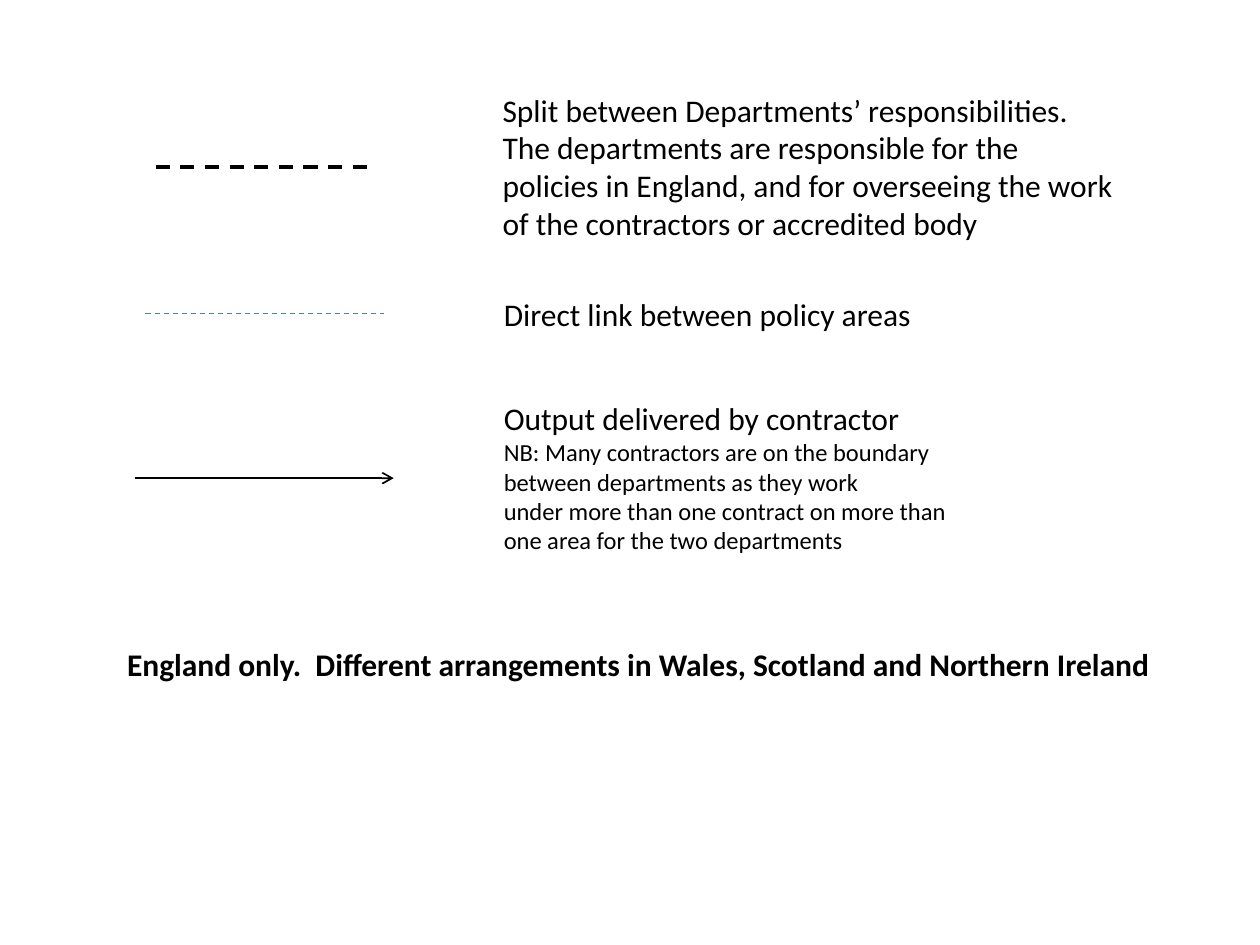
from lxml import etree
from pptx import Presentation
from pptx.dml.color import RGBColor
from pptx.enum.dml import MSO_LINE
from pptx.enum.shapes import MSO_CONNECTOR
from pptx.enum.text import MSO_AUTO_SIZE
from pptx.oxml.ns import qn
from pptx.util import Inches, Pt

STRAIGHT = MSO_CONNECTOR.STRAIGHT
DASH = MSO_LINE.DASH
FIT_SHAPE = MSO_AUTO_SIZE.SHAPE_TO_FIT_TEXT

COLORS = {"text": "000000", "split": "000000", "link": "4B7EBC", "output": "000000"}
FONT = "Calibri"
HEADING_SIZE, NOTE_SIZE = 18, 14
SYMBOL_CENTER = 2.1


def add_text(slide, box, lines, wrap=True, bold=False):
    """Place (text, size) lines in a box, one paragraph each."""
    text_box = slide.shapes.add_textbox(*map(Inches, box))
    frame = text_box.text_frame
    frame.word_wrap = wrap
    frame.auto_size = FIT_SHAPE
    frame.text = "\n".join(text for text, _ in lines)
    for paragraph, (_, size) in zip(frame.paragraphs, lines):
        font = paragraph.runs[0].font
        font.name, font.size, font.bold = FONT, Pt(size), bold
        font.color.rgb = RGBColor.from_string(COLORS["text"])


def add_symbol(slide, middle, length, color, weight, dash=None, arrow=False):
    """Draw a horizontal key line centred in the symbol column."""
    start, end = SYMBOL_CENTER - length / 2, SYMBOL_CENTER + length / 2
    symbol = slide.shapes.add_connector(
        STRAIGHT, Inches(start), Inches(middle), Inches(end), Inches(middle))
    symbol.line.color.rgb = RGBColor.from_string(COLORS[color])
    symbol.line.width = Pt(weight)
    if dash:
        symbol.line.dash_style = dash
    properties = symbol._element.spPr
    if arrow:
        etree.SubElement(properties.find(qn("a:ln")), qn("a:tailEnd"), type="arrow")
    etree.SubElement(properties, qn("a:effectLst"))


def add_key_row(slide, box, lines, symbol, wrap=True):
    """Pair an explanation with a symbol at its mid height."""
    _, top, _, height = box
    add_symbol(slide, top + height / 2, **symbol)
    add_text(slide, box, lines, wrap)


def build_key(slide):
    # Boundary between departments
    add_key_row(
        slide, (3.89, 0.67, 5.04, 1.31),
        [("Split between Departments’ responsibilities.  The departments are "
          "responsible for the policies in England, and for overseeing the work "
          "of the contractors or accredited body", HEADING_SIZE)],
        {"length": 1.73, "color": "split", "weight": 2, "dash": DASH})

    # Link between policy areas
    add_key_row(
        slide, (3.9, 2.29, 3.47, 0.4),
        [("Direct link between policy areas", HEADING_SIZE)],
        {"length": 1.89, "color": "link", "weight": 0.75, "dash": DASH},
        wrap=False)

    # Contractor output
    notes = ["NB: Many contractors are on the boundary",
             "between departments as they work",
             "under more than one contract on more than",
             "one area for the two departments"]
    add_key_row(
        slide, (3.9, 3.12, 3.94, 1.35),
        [("Output delivered by contractor", HEADING_SIZE)]
        + [(note, NOTE_SIZE) for note in notes],
        {"length": 2.05, "color": "output", "weight": 1, "arrow": True})


def main():
    presentation = Presentation()
    presentation.slide_width, presentation.slide_height = Inches(10), Inches(7.5)
    slide = presentation.slides.add_slide(presentation.slide_layouts[6])
    build_key(slide)
    # Scope statement
    add_text(
        slide, (0.91, 5.07, 8.39, 0.4),
        [("England only.  Different arrangements in Wales, Scotland and "
          "Northern Ireland", HEADING_SIZE)],
        wrap=False, bold=True)
    presentation.save("out.pptx")


if __name__ == "__main__":
    main()
